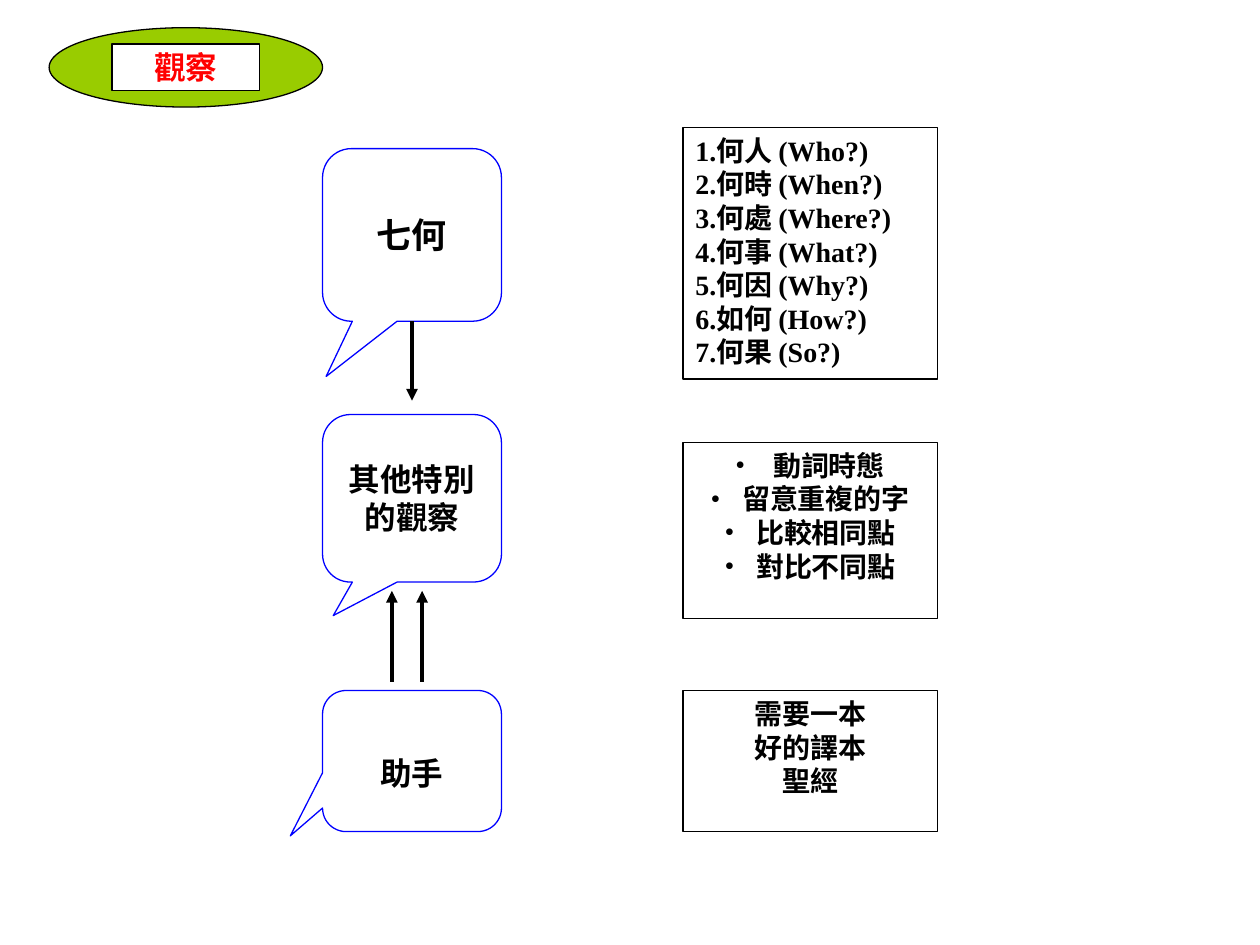
from lxml import etree
from pptx import Presentation
from pptx import util as u
from pptx.dml.color import RGBColor
from pptx.enum import shapes, text
from pptx.oxml.ns import qn

SERIF, SANS = "Times New Roman", "Arial"
KINDS = shapes.MSO_SHAPE

deck = Presentation()
deck.slide_width, deck.slide_height = u.Inches(10), u.Inches(7.5)
page = deck.slides.add_slide(deck.slide_layouts[6])


def color(value):
    return RGBColor.from_string(value)


def add_box(kind, left, top, width, height, lines=(), font=SERIF, size=16,
            fill="FFFFFF", line="000000", ink="000000", align=text.PP_ALIGN.CENTER,
            anchor=text.MSO_ANCHOR.MIDDLE):
    """Add an outlined shape, in inches, with one bold paragraph per line."""
    box = page.shapes.add_shape(kind, *map(u.Inches, (left, top, width, height)))
    box.shadow.inherit = False
    box.fill.solid()
    box.fill.fore_color.rgb = color(fill)
    box.line.color.rgb = color(line)
    box.line.width = u.Pt(0.75)
    frame = box.text_frame
    frame.word_wrap = True
    frame.vertical_anchor = anchor
    if lines:
        frame.text = "\n".join(lines)
    for para in frame.paragraphs:
        para.alignment = align
        for span in para.runs:
            span.font.name, span.font.size, span.font.bold = font, u.Pt(size), True
            span.font.color.rgb = color(ink)
    return box


# Heading
add_box(KINDS.OVAL, 0.39, 0.22, 2.17, 0.63, fill="99CC00")
add_box(KINDS.RECTANGLE, 0.89, 0.35, 1.17, 0.37, ["觀察"], size=18, ink="FF0000")

# Left column: callouts
callout_left, callout_width = 2.56, 1.42
callouts = []
for top, height, label, font, size, tip in [
    (1.18, 1.37, "七何", SERIF, 20, (-0.48, 0.82)),
    (3.29, 1.33, "其他特別的觀察", SANS, 18, (-0.44, 0.7)),
    (5.48, 1.12, "助手", SANS, 18, (-0.68, 0.53)),
]:
    callout = add_box(KINDS.ROUNDED_RECTANGULAR_CALLOUT, callout_left, top, callout_width,
                      height, [label], font, size, line="0000FF")
    callout.adjustments[0], callout.adjustments[1] = tip
    callouts.append(callout)
callouts[-1].text_frame.margin_top = u.Inches(0.24)

# Right column: details
details = []
for top, height, lines, font, align in [
    (1.01, 2, ["1.何人 (Who?)", "2.何時 (When?)", "3.何處 (Where?)", "4.何事 (What?)",
               "5.何因 (Why?)", "6.如何 (How?)", "7.何果 (So?)"], SERIF, text.PP_ALIGN.LEFT),
    (3.51, 1.4, [" 動詞時態", "留意重複的字", "比較相同點", "對比不同點"],
     SERIF, text.PP_ALIGN.CENTER),
    (5.48, 1.12, ["需要一本", "好的譯本", "聖經"], SANS, text.PP_ALIGN.CENTER),
]:
    details.append(add_box(KINDS.RECTANGLE, 5.42, top, 2.02, height, lines, font,
                           align=align, anchor=text.MSO_ANCHOR.TOP))

for para in details[1].text_frame.paragraphs:
    props = para._p.get_or_add_pPr()
    props.set("marL", str(u.Inches(0.25)))
    props.set("indent", str(-u.Inches(0.25)))
    etree.SubElement(props, qn("a:buFont"), typeface=SERIF)
    etree.SubElement(props, qn("a:buChar"), char="•")

# Arrows between the callouts
arrows = []
for x, start, end in [(3.27, 2.55, 3.18), (3.11, 5.41, 4.69), (3.35, 5.41, 4.69)]:
    arrow = page.shapes.add_connector(shapes.MSO_CONNECTOR.STRAIGHT,
                                      *map(u.Inches, (x, start, x, end)))
    arrow.line.color.rgb = color("000000")
    arrow.line.width = u.Pt(2.25)
    etree.SubElement(arrow.line._get_or_add_ln(), qn("a:tailEnd"), type="triangle")
    etree.SubElement(arrow._element.spPr, qn("a:effectLst"))
    arrows.append(arrow)
arrows[0].begin_connect(callouts[0], 2)

deck.save("out.pptx")
